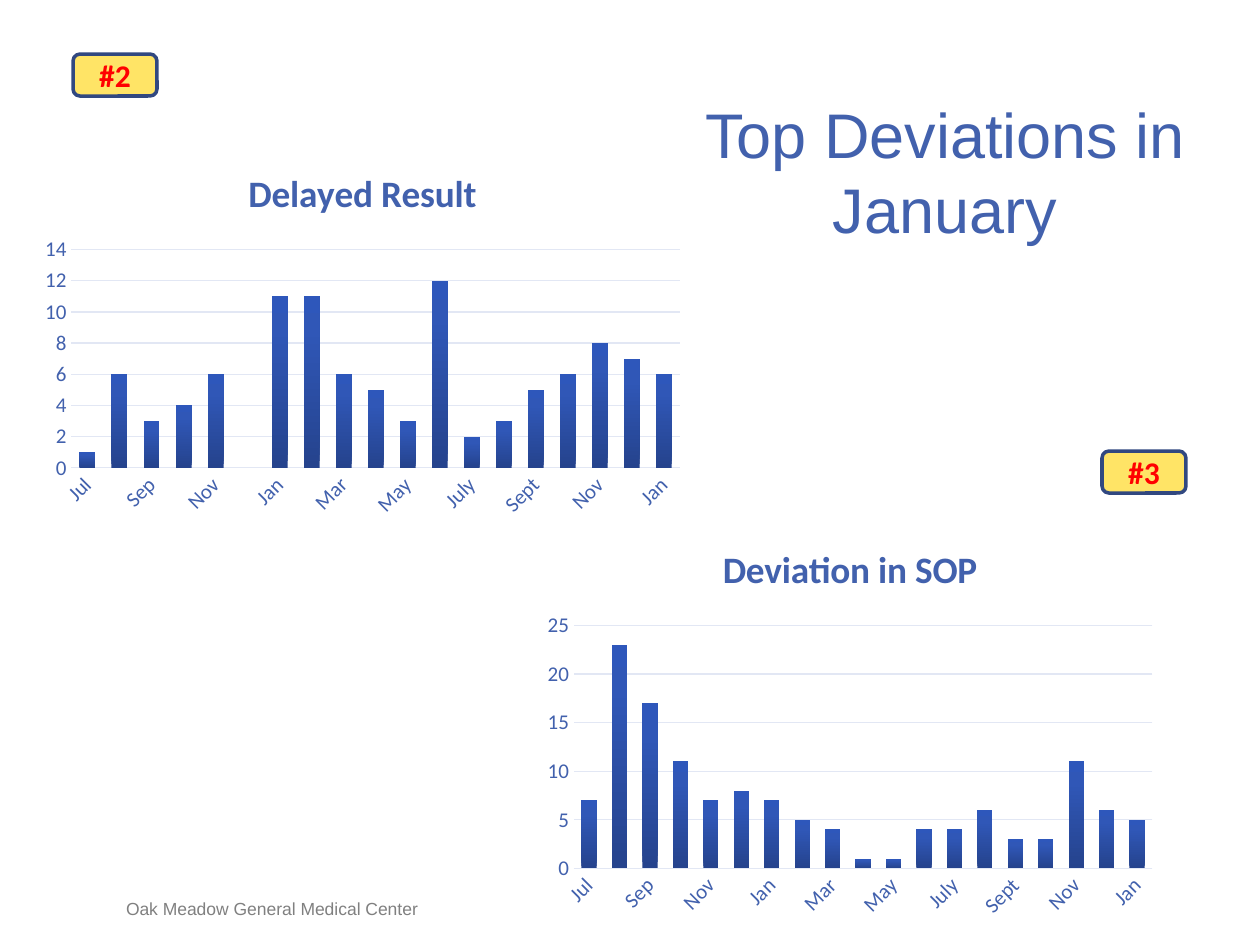
"""Builds the slide of top deviations in January with two monthly column charts."""
from copy import deepcopy

from pptx import Presentation
from pptx.chart.data import CategoryChartData
from pptx.dml.color import RGBColor
from pptx.enum.chart import XL_CHART_TYPE, XL_TICK_MARK
from pptx.enum.shapes import MSO_SHAPE
from pptx.enum.text import MSO_ANCHOR, PP_ALIGN
from pptx.oxml import parse_xml
from pptx.oxml.ns import nsdecls, qn
from pptx.util import Pt

COLUMNS = XL_CHART_TYPE.COLUMN_CLUSTERED
NO_TICK = XL_TICK_MARK.NONE
ROUNDED = MSO_SHAPE.ROUNDED_RECTANGLE
MIDDLE, BOTTOM = MSO_ANCHOR.MIDDLE, MSO_ANCHOR.BOTTOM
LEFT, CENTER = PP_ALIGN.LEFT, PP_ALIGN.CENTER
PX = 914400 / 126

THEME = {
    "blue": RGBColor(0x42, 0x61, 0xAD),
    "grid": RGBColor(0xE2, 0xE7, 0xF4),
    "badge": RGBColor(0xFF, 0xE4, 0x66),
    "badge_line": RGBColor(0x31, 0x48, 0x80),
    "red": RGBColor(0xFF, 0x00, 0x00),
    "gray": RGBColor(0x80, 0x80, 0x80),
    "columns": [(0, "25438D"), (0.8, "3057B7"), (1, "2E57BB")],
    "heading": "Arial",
    "body": "Calibri",
    "title_size": Pt(36),
    "chart_title_size": Pt(21.3),
    "badge_size": Pt(18),
    "axis_size": Pt(12),
    "footer_size": Pt(10),
}

MONTHS = ["Jul", "Aug", "Sep", "Oct", "Nov", "Dec", "Jan", "Feb", "Mar", "Apr",
          "May", "Jun", "July", "Aug", "Sept", "Oct", "Nov", "Dec", "Jan"]
DEVIATIONS = [
    ("#2", (73, 54, 84, 42), "Delayed Result", (32, 147, 661, 378), 14, 2,
     [1, 6, 3, 4, 6, None, 11, 11, 6, 5, 3, 12, 2, 3, 5, 6, 8, 7, 6]),
    ("#3", (1102, 451, 84, 42), "Deviation in SOP", (535, 522, 630, 404), 25, 5,
     [7, 23, 17, 11, 7, 8, 7, 5, 4, 1, 1, 4, 4, 6, 3, 3, 11, 6, 5]),
]


def emu(*lengths):
    return [round(length * PX) for length in lengths]


def write(frame, text, font, size, color, bold=False, align=CENTER):
    paragraph = frame.paragraphs[0]
    paragraph.alignment = align
    run = paragraph.add_run()
    run.text = text
    run.font.name = font
    run.font.size = size
    run.font.bold = bold
    run.font.color.rgb = color


deck = Presentation()
deck.slide_width, deck.slide_height = emu(1260, 945)
slide = deck.slides.add_slide(deck.slide_layouts[5])

title = slide.shapes.title
title.left, title.top, title.width, title.height = emu(693, 95, 504, 152)
footer = slide.shapes.add_textbox(*emu(126, 897, 399, 22))
for box, anchor in ((title, MIDDLE), (footer, BOTTOM)):
    frame = box.text_frame
    frame.word_wrap = True
    frame.vertical_anchor = anchor
    frame.margin_left = frame.margin_right = frame.margin_top = frame.margin_bottom = 0
write(title.text_frame, "Top Deviations in January", THEME["heading"],
      THEME["title_size"], THEME["blue"])
write(footer.text_frame, "Oak Meadow General Medical Center", THEME["heading"],
      THEME["footer_size"], THEME["gray"], align=LEFT)

for rank, badge_place, deviation, chart_place, top_value, step, counts in DEVIATIONS:
    badge = slide.shapes.add_shape(ROUNDED, *emu(*badge_place))
    badge.shadow.inherit = False
    badge.fill.solid()
    badge.fill.fore_color.rgb = THEME["badge"]
    badge.line.color.rgb = THEME["badge_line"]
    badge.line.width = Pt(2)
    badge.text_frame.vertical_anchor = MIDDLE
    write(badge.text_frame, rank, THEME["body"], THEME["badge_size"], THEME["red"], bold=True)

    monthly = CategoryChartData()
    monthly.categories = MONTHS
    monthly.add_series(deviation, counts)
    chart = slide.shapes.add_chart(COLUMNS, *emu(*chart_place), monthly).chart
    chart.has_legend = False
    chart.font.name = THEME["body"]
    chart.font.size = THEME["axis_size"]
    chart.font.color.rgb = THEME["blue"]
    chart.has_title = True
    chart.chart_title.include_in_layout = False
    write(chart.chart_title.text_frame, deviation, THEME["body"],
          THEME["chart_title_size"], THEME["blue"], bold=True)

    months, scale = chart.category_axis, chart.value_axis
    for axis in (months, scale):
        axis.major_tick_mark = axis.minor_tick_mark = NO_TICK
        axis.tick_labels.font.name = THEME["body"]
        axis.tick_labels.font.size = THEME["axis_size"]
        axis.tick_labels.font.color.rgb = THEME["blue"]
    for line in (months.format.line, scale.major_gridlines.format.line):
        line.color.rgb = THEME["grid"]
        line.width = Pt(0.75)
    scale.format.line.fill.background()
    scale.minimum_scale, scale.maximum_scale, scale.major_unit = 0, top_value, step
    months_xml = months._element
    months_xml.find(qn("c:txPr")).find(qn("a:bodyPr")).set("rot", "-2700000")
    months_xml.find(qn("c:noMultiLvlLbl")).addprevious(
        parse_xml(f'<c:tickLblSkip {nsdecls("c")} val="2"/>'))

    plot = chart.plots[0]
    plot.vary_by_categories = False
    plot.gap_width = 100
    plot.overlap = -24
    columns = plot.series[0]
    fill = columns.format.fill
    fill.gradient()
    fill.gradient_angle = 90
    stop_list = next(columns._element.iter(qn("a:gsLst")))
    stop_list.append(deepcopy(stop_list[-1]))
    for stop, (position, color) in zip(fill.gradient_stops, THEME["columns"]):
        stop.position = position
        stop.color.rgb = RGBColor.from_string(color)

deck.save("out.pptx")
